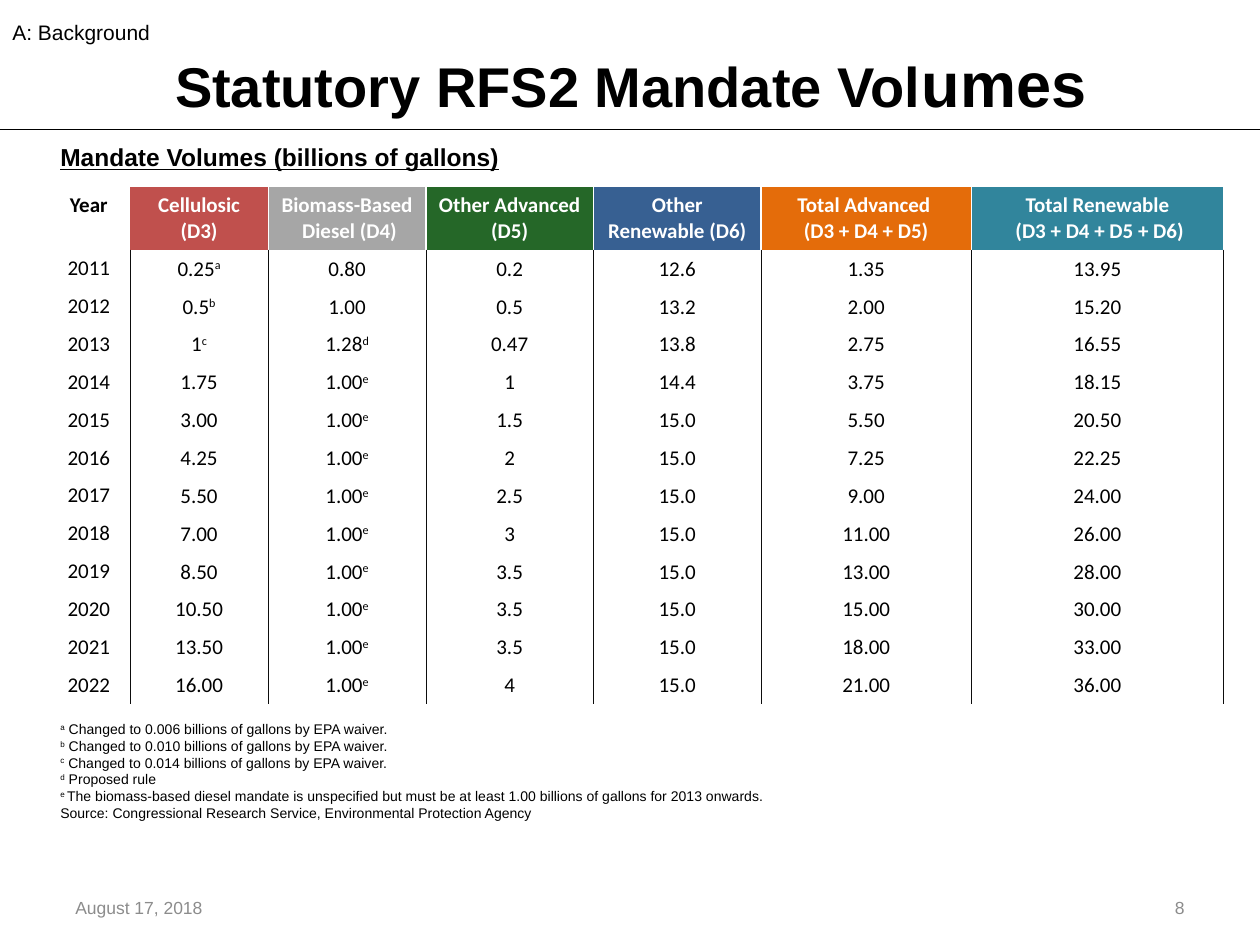
from lxml import etree
from pptx import Presentation
from pptx.dml.color import RGBColor
from pptx.enum import shapes, text
from pptx.oxml import ns
from pptx.util import Inches, Pt

BLACK = RGBColor(0x00, 0x00, 0x00)
WHITE = RGBColor(0xFF, 0xFF, 0xFF)
GRAY = RGBColor(0x8C, 0x8C, 0x8C)
RULE = RGBColor(0x0D, 0x0D, 0x0D)
RED = RGBColor(0xC0, 0x50, 0x4D)
SILVER = RGBColor(0xA6, 0xA6, 0xA6)
GREEN = RGBColor(0x25, 0x67, 0x28)
BLUE = RGBColor(0x37, 0x60, 0x92)
ORANGE = RGBColor(0xE4, 0x6C, 0x0A)
TEAL = RGBColor(0x31, 0x85, 0x9C)

CENTER = text.PP_ALIGN.CENTER
MIDDLE = text.MSO_ANCHOR.MIDDLE
NO_GRID_STYLE = "{2D5ABB26-0587-4C30-8999-92F81FD0307C}"

COLUMNS = [
    ("Year", 0.65, WHITE),
    ("Cellulosic (D3)", 1.1, RED),
    ("Biomass-Based\n Diesel (D4)", 1.25, SILVER),
    ("Other Advanced \n(D5)", 1.33, GREEN),
    ("Other Renewable (D6)", 1.33, BLUE),
    ("Total Advanced \n(D3 + D4 + D5)", 1.67, ORANGE),
    ("Total Renewable\n (D3 + D4 + D5 + D6)", 2, TEAL),
]

MANDATES = [
    ("2011", "0.25^a", "0.80", "0.2", "12.6", "1.35", "13.95"),
    ("2012", "0.5^b", "1.00", "0.5", "13.2", "2.00", "15.20"),
    ("2013", "1^c", "1.28^d", "0.47", "13.8", "2.75", "16.55"),
    ("2014", "1.75", "1.00^e", "1", "14.4", "3.75", "18.15"),
    ("2015", "3.00", "1.00^e", "1.5", "15.0", "5.50", "20.50"),
    ("2016", "4.25", "1.00^e", "2", "15.0", "7.25", "22.25"),
    ("2017", "5.50", "1.00^e", "2.5", "15.0", "9.00", "24.00"),
    ("2018", "7.00", "1.00^e", "3", "15.0", "11.00", "26.00"),
    ("2019", "8.50", "1.00^e", "3.5", "15.0", "13.00", "28.00"),
    ("2020", "10.50", "1.00^e", "3.5", "15.0", "15.00", "30.00"),
    ("2021", "13.50", "1.00^e", "3.5", "15.0", "18.00", "33.00"),
    ("2022", "16.00", "1.00^e", "4", "15.0", "21.00", "36.00"),
]

FOOTNOTES = """^a^ Changed to 0.006 billions of gallons by EPA waiver.
^b^ Changed to 0.010 billions of gallons by EPA waiver.
^c^ Changed to 0.014 billions of gallons by EPA waiver.
^d^ Proposed rule
^e ^The biomass-based diesel mandate is unspecified but must be at least 1.00 billions of gallons for 2013 onwards.
Source: Congressional Research Service, Environmental Protection Agency"""


class MandateSlide:
    font = "Arial"
    table_font = "Calibri"

    def __init__(self, deck):
        self.page = deck.slides.add_slide(deck.slide_layouts[5])

    def fill_text(self, frame, content, size, color=BLACK, name=None, bold=False,
                  underline=None, align=None, spacing=None):
        for index, line in enumerate(content.split("\n")):
            para = frame.add_paragraph() if index else frame.paragraphs[0]
            para.alignment = align
            para.line_spacing = spacing
            font = para.font
            font.name, font.size = name or self.font, Pt(size)
            font.bold, font.underline = bold, underline
            font.color.rgb = color
            for part, piece in enumerate(line.split("^")):
                if piece:
                    span = para.add_run()
                    span.text = piece
                    if part % 2:
                        span._r.get_or_add_rPr().set("baseline", "30000")

    def title(self, pieces, left, top, width, height):
        box = self.page.shapes.title
        box.left, box.top = Inches(left), Inches(top)
        box.width, box.height = Inches(width), Inches(height)
        box.text_frame.vertical_anchor = text.MSO_ANCHOR.BOTTOM
        para = box.text_frame.paragraphs[0]
        para.alignment = CENTER
        para.font.name, para.font.bold = self.font, True
        para.font.color.rgb = BLACK
        for words, size in pieces:
            span = para.add_run()
            span.text = words
            span.font.size = Pt(size)

    def label(self, content, left, top, width, height, size, anchor=None,
              wrap=True, fill=None, **style):
        box = self.page.shapes.add_textbox(
            Inches(left), Inches(top), Inches(width), Inches(height))
        if fill is not None:
            box.fill.solid()
            box.fill.fore_color.rgb = fill
        box.text_frame.word_wrap = wrap
        box.text_frame.vertical_anchor = anchor
        self.fill_text(box.text_frame, content, size, **style)

    def rule(self, top):
        line = self.page.shapes.add_connector(
            shapes.MSO_CONNECTOR.STRAIGHT, 0, Inches(top), Inches(10), Inches(top))
        line.line.color.rgb = BLACK
        line.line.width = Pt(0.75)
        etree.SubElement(line._element.spPr, ns.qn("a:effectLst"))

    def borders(self, cell, sides, color, width):
        properties = cell._tc.get_or_add_tcPr()
        for index, side in enumerate(sides):
            edge = etree.Element(ns.qn(f"a:ln{side}"), w=str(Pt(width)))
            solid = etree.SubElement(edge, ns.qn("a:solidFill"))
            etree.SubElement(solid, ns.qn("a:srgbClr"), val=str(color))
            properties.insert(index, edge)

    def table(self, columns, rows, left, top):
        widths = [width for _, width, _ in columns]
        frame = self.page.shapes.add_table(
            len(rows) + 1, len(columns), Inches(left), Inches(top),
            Inches(sum(widths)), Inches(4.1))
        grid = frame.table
        grid.first_row = grid.horz_banding = False
        grid._tbl.tblPr.find(ns.qn("a:tableStyleId")).text = NO_GRID_STYLE
        for column, width in zip(grid.columns, widths):
            column.width = Inches(width)
        for index, row in enumerate(grid.rows):
            row.height = Inches(0.29 if index else 0.5)
        for col, (heading, _, fill) in enumerate(columns):
            cell = grid.cell(0, col)
            cell.fill.solid()
            cell.fill.fore_color.rgb = fill
            self.fill_text(cell.text_frame, heading, 12, WHITE if col else BLACK,
                           self.table_font, bold=True, align=CENTER)
            if col:
                self.borders(cell, "RT" if col == 1 else "LRT", WHITE, 1)
        for index, values in enumerate(rows, 1):
            for col, value in enumerate(values):
                cell = grid.cell(index, col)
                cell.fill.background()
                self.fill_text(cell.text_frame, value, 12, name=self.table_font,
                               align=CENTER)
                self.borders(cell, "LR" if col else "R", RULE, 0.25)
                if col:
                    cell.vertical_anchor = MIDDLE
                    cell.margin_left = cell.margin_right = cell.margin_top = Inches(0.01)
                    cell.margin_bottom = 0


def main():
    deck = Presentation()
    deck.slide_width, deck.slide_height = Inches(10), Inches(7.5)
    slide = MandateSlide(deck)
    slide.rule(1.03)
    slide.label(FOOTNOTES, 0.38, 5.67, 9.21, 0.91, 8, fill=WHITE)
    slide.label("August 17, 2018", 0.5, 7, 3.5, 0.4, 10, MIDDLE, color=GRAY)
    slide.title([("Statutory RFS2 Mandate Vol", 32), ("umes", 36)], 0.17, 0.08, 9.67, 0.92)
    slide.table(COLUMNS, MANDATES, 0.38, 1.48)
    slide.label("Mandate Volumes (billions of gallons)", 0.38, 1.08, 9.21, 0.34, 14,
                bold=True, underline=True)
    slide.label("A: Background", 0, 0.01, 1.3, 0.37, 12, wrap=False, spacing=1.5)
    slide.label("8", 7.17, 7, 2.33, 0.4, 10, MIDDLE, color=GRAY,
                align=text.PP_ALIGN.RIGHT)
    deck.save("out.pptx")


if __name__ == "__main__":
    main()
